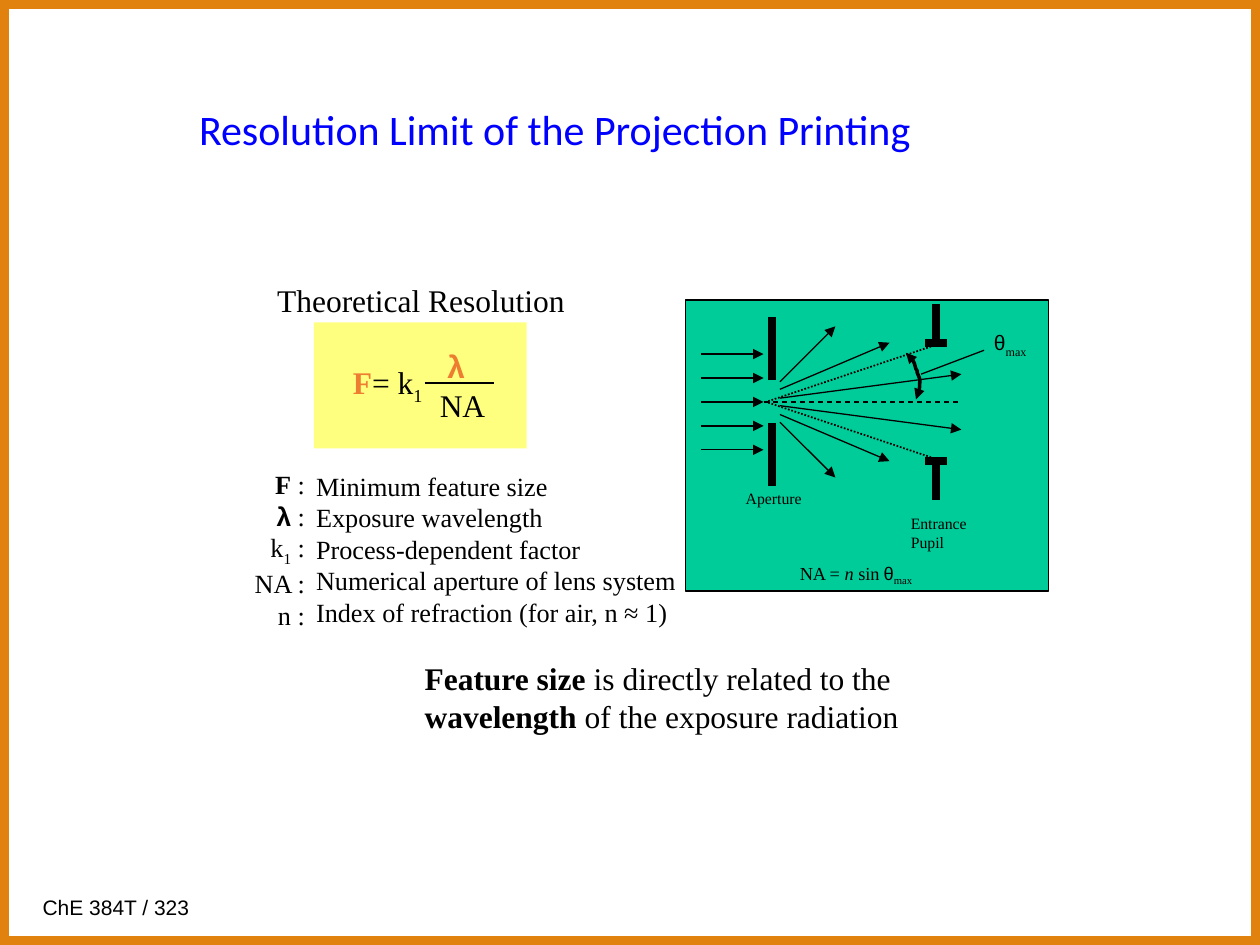
from lxml.etree import SubElement
from pptx import Presentation
from pptx.dml.color import RGBColor
from pptx.enum.dml import MSO_LINE
from pptx.enum.shapes import MSO_CONNECTOR, MSO_SHAPE
from pptx.enum.text import MSO_ANCHOR, MSO_AUTO_SIZE, PP_ALIGN
from pptx.oxml.ns import qn
from pptx.util import Inches, Pt

BLACK = RGBColor(0x00, 0x00, 0x00)
WHITE = RGBColor(0xFF, 0xFF, 0xFF)
BLUE = RGBColor(0x00, 0x00, 0xFF)
ORANGE = RGBColor(0xED, 0x7D, 0x31)
FRAME = RGBColor(0xE2, 0x82, 0x0E)
YELLOW = RGBColor(0xFF, 0xFF, 0x00)
GREEN = RGBColor(0x00, 0xCC, 0x99)

SERIF, SANS = "Times New Roman", "Arial"
WIDE, MEDIUM, TIGHT = (0.1, 0.05), (0.08, 0.04), (0.07, 0.04)

# Run formats
BOLD = {"bold": True}
SUB = {"baseline": "-25000"}
GREEK = {"font": SANS}

# Content: each paragraph is a list of (text, format) runs
CONCLUSION = [
    [("Feature size", BOLD), (" is directly related to the", {})],
    [("wavelength", BOLD), (" of the exposure radiation", {})],
]
FORMULA = [[("F", {"bold": True, "color": ORANGE}), ("= k", {}), ("1", SUB)]]
SYMBOLS = [
    [("F", BOLD), (" :", {})],
    [("λ", BOLD | GREEK), (" :", {})],
    [("k", {}), ("1", SUB), (" :", {})],
    [("NA :", {})],
    [("n :", {})],
]
MEANINGS = [
    "Minimum feature size",
    "Exposure wavelength",
    "Process-dependent factor",
    "Numerical aperture of lens system",
    "Index of refraction (for air, n ≈ 1)",
]
ANGLE = [[("θ", GREEK), ("max", SUB)]]
NA_EQUATION = [[("NA = ", {}), ("n", {"italic": True}), (" sin", {}),
                (" ", {"size": 9}), ("θ", GREEK), ("max", SUB)]]

# Optical diagram: vertical positions are offsets from the optical axis
AXIS = 3.19
FOCUS_X, APERTURE_X, PUPIL_X, RAY_X = 6.08, 6.13, 7.43, 6.19
RAYS = [(0.16, 6.63, 0.6), (0.1, 7.06, 0.47), (0.03, 7.63, 0.22)]
INCOMING_COUNT, INCOMING_GAP = 5, 0.19
ARC_START = (7.19, 2.8)
ARC_CURVES = [
    [(7.25, 2.85), (7.25, 2.86), (7.27, 2.93)],
    [(7.28, 2.94), (7.28, 2.95), (7.28, 2.96)],
    [(7.29, 2.98), (7.3, 3.01), (7.3, 3.01)],
    [(7.3, 3.05), (7.3, 3.09), (7.29, 3.12)],
    [(7.29, 3.14), (7.27, 3.17), (7.27, 3.17)],
]

presentation = Presentation()
presentation.slide_width, presentation.slide_height = Inches(10), Inches(7.5)
slide = presentation.slides.add_slide(presentation.slide_layouts[6])


def add_box(left, top, width, height, fill=None, line=None, line_width=0.75):
    shape = slide.shapes.add_shape(MSO_SHAPE.RECTANGLE, Inches(left), Inches(top),
                                   Inches(width), Inches(height))
    shape.shadow.inherit = False
    if fill is None:
        shape.fill.background()
    else:
        shape.fill.solid()
        shape.fill.fore_color.rgb = fill
    if line is None:
        shape.line.fill.background()
    else:
        shape.line.color.rgb = line
        shape.line.width = Pt(line_width)
    return shape


def add_text(text, left, top, width, height, size=18, font=SERIF, color=BLACK,
             bold=False, align=PP_ALIGN.LEFT, insets=TIGHT, wrap=False,
             anchor=MSO_ANCHOR.TOP, fill=None):
    if fill is None:
        shape = slide.shapes.add_textbox(Inches(left), Inches(top),
                                         Inches(width), Inches(height))
    else:
        shape = add_box(left, top, width, height, fill=fill)
    frame = shape.text_frame
    frame.word_wrap = wrap
    frame.auto_size = MSO_AUTO_SIZE.SHAPE_TO_FIT_TEXT
    frame.vertical_anchor = anchor
    frame.margin_left = frame.margin_right = Inches(insets[0])
    frame.margin_top = frame.margin_bottom = Inches(insets[1])
    paragraphs = [[(text, {})]] if isinstance(text, str) else text
    for index, runs in enumerate(paragraphs):
        paragraph = frame.add_paragraph() if index else frame.paragraphs[0]
        paragraph.alignment = align
        for words, style in runs:
            run = paragraph.add_run()
            run.text = words
            run.font.name = style.get("font", font)
            run.font.size = Pt(style.get("size", size))
            run.font.bold = style.get("bold", bold)
            run.font.italic = style.get("italic", False)
            run.font.color.rgb = style.get("color", color)
            if "baseline" in style:
                run.font._element.set("baseline", style["baseline"])


def add_arrowheads(line, *ends):
    for end in ends:
        SubElement(line._get_or_add_ln(), qn(f"a:{end}"), type="triangle")


def add_line(x1, y1, x2, y2, width=0.75, dash=None, arrow=False):
    connector = slide.shapes.add_connector(MSO_CONNECTOR.STRAIGHT, Inches(x1), Inches(y1),
                                           Inches(x2), Inches(y2))
    SubElement(connector._element.spPr, qn("a:effectLst"))
    connector.line.color.rgb = BLACK
    connector.line.width = Pt(width)
    if dash:
        connector.line.dash_style = dash
    if arrow:
        add_arrowheads(connector.line, "tailEnd")


def curve_points(start, curves, steps=4):
    points = []
    for first, second, end in curves:
        for step in range(1, steps + 1):
            t = step / steps
            weights = (1 - t) ** 3, 3 * t * (1 - t) ** 2, 3 * t ** 2 * (1 - t), t ** 3
            corners = start, first, second, end
            points.append(tuple(Inches(sum(w * c[i] for w, c in zip(weights, corners)))
                                for i in (0, 1)))
        start = end
    return points


# Frame, footer, title and conclusion
add_box(0, 0, 10, 7.5, line=FRAME, line_width=10)
add_text("ChE 384T / 323", 0.24, 7.05, 2.86, 0.3, size=12, font=SANS, insets=WIDE, wrap=True)
add_text(CONCLUSION, 3.29, 5.19, 3.95, 0.68, insets=MEDIUM)
add_text("Resolution Limit of the Projection Printing", 1.5, 0.78, 7.17, 0.48, size=24,
         font="Calibri", color=BLUE, insets=MEDIUM, wrap=True,
         anchor=MSO_ANCHOR.MIDDLE, fill=WHITE)

# Resolution formula
add_text("Theoretical Resolution", 2.13, 2.19, 2.46, 0.38)
panel = add_box(2.49, 2.56, 1.69, 1, fill=YELLOW)
panel_color = panel._element.spPr.find(qn("a:solidFill"))[0]
SubElement(panel_color, qn("a:alpha"), val="50000")
add_text(FORMULA, 2.73, 2.84, 0.72, 0.38)
add_line(3.37, 3.04, 3.92, 3.04, width=1)
add_text("λ", 3.48, 2.71, 0.29, 0.38, font=SANS, color=ORANGE, bold=True)
add_text("NA", 3.42, 3.02, 0.51, 0.38)

# Symbol legend
add_text(SYMBOLS, 1.94, 3.68, 0.55, 1.34, size=15, align=PP_ALIGN.RIGHT)
add_text([[(meaning, {})] for meaning in MEANINGS], 2.41, 3.68, 3.08, 1.36,
         size=15, insets=WIDE)

# Diagram: aperture, rays and pupil mirrored about the axis
add_box(5.44, 2.38, 2.88, 2.31, fill=GREEN, line=BLACK)
for side in (-1, 1):
    add_line(APERTURE_X, AXIS + side * 0.17, APERTURE_X, AXIS + side * 0.67, width=4.5)
    for start, end_x, end in RAYS:
        add_line(RAY_X, AXIS + side * start, end_x, AXIS + side * end, arrow=True)
    pupil_y = AXIS + side * 0.47
    add_line(PUPIL_X, AXIS + side * 0.78, PUPIL_X, pupil_y, width=4.5)
    add_line(PUPIL_X - 0.09, pupil_y, PUPIL_X + 0.09, pupil_y, width=4.5)
    add_line(7.39, AXIS + side * 0.44, FOCUS_X, AXIS, width=1, dash=MSO_LINE.ROUND_DOT)
for index in range(INCOMING_COUNT):
    y = AXIS + (index - INCOMING_COUNT // 2) * INCOMING_GAP
    add_line(5.56, y, 6.06, y, arrow=True)
add_line(6.06, AXIS, 7.63, AXIS, dash=MSO_LINE.DASH)

# Angle arc with its leader line
builder = slide.shapes.build_freeform(*(Inches(value) for value in ARC_START))
builder.add_line_segments(curve_points(ARC_START, ARC_CURVES), close=False)
arc = builder.convert_to_shape()
arc.shadow.inherit = False
arc.fill.background()
arc.line.color.rgb = BLACK
arc.line.width = Pt(2)
add_arrowheads(arc.line, "headEnd", "tailEnd")
add_line(7.31, 2.97, 7.81, 2.78)

# Diagram labels
add_text("Aperture", 5.82, 3.83, 0.65, 0.25, size=9, insets=WIDE)
add_text([[("Entrance", {})], [("Pupil", {})]], 7.13, 4.03, 0.65, 0.4, size=9, insets=WIDE)
add_text(ANGLE, 7.79, 2.57, 0.48, 0.3, size=12, insets=WIDE)
add_text(NA_EQUATION, 6.25, 4.41, 1.13, 0.28, size=10.5, insets=WIDE)

presentation.save("out.pptx")
